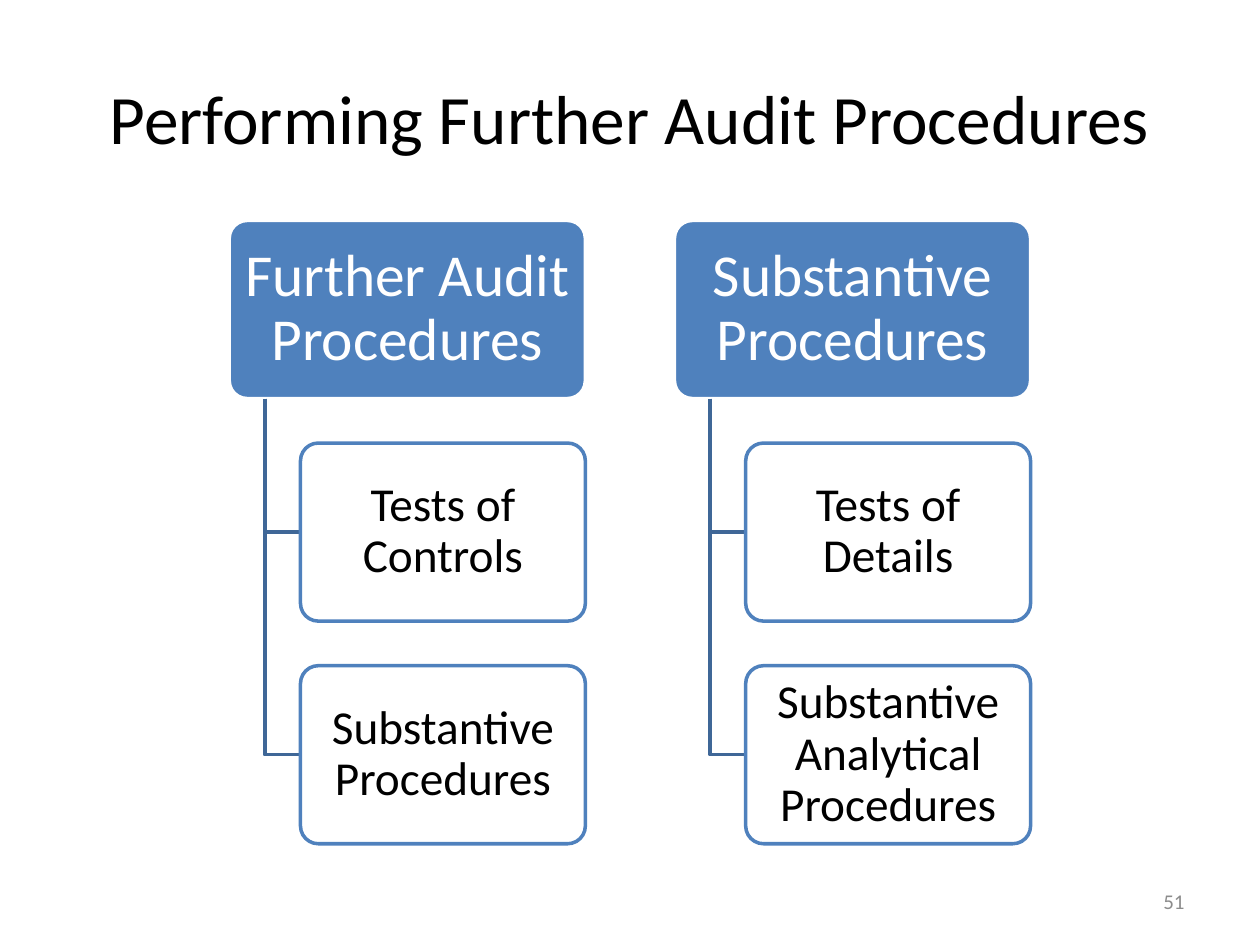
import pptx
import pptx.dml.color
import pptx.enum.shapes
import pptx.enum.text
import pptx.oxml
import pptx.oxml.ns
import pptx.util

Pt = pptx.util.Pt
ALIGN = pptx.enum.text.PP_ALIGN
MIDDLE = pptx.enum.text.MSO_ANCHOR.MIDDLE

BRANCHES = [
    ("Further Audit Procedures", ["Tests of Controls", "Substantive Procedures"]),
    ("Substantive Procedures", ["Tests of Details", "Substantive Analytical Procedures"]),
]
LEFT, TOP = 131, 126
BOX_WIDTH, BOX_HEIGHT = 203.5, 101.75
COLUMN_PITCH, ROW_PITCH = 254.4, 127.2
INDENT = BOX_WIDTH / 10


def color(hex_string):
    return pptx.dml.color.RGBColor.from_string(hex_string)


class SlideBuilder:
    font_name = "Calibri"
    accent = "4F81BD"
    connector_color = "3F6797"
    white = "FFFFFF"
    black = "000000"
    line_width = 2

    def __init__(self, presentation):
        self.slide = presentation.slides.add_slide(presentation.slide_layouts[5])

    def set_text(self, shape, text, size, font_color, alignment):
        frame = shape.text_frame
        frame.text = text
        frame.word_wrap = True
        frame.auto_size = pptx.enum.text.MSO_AUTO_SIZE.NONE
        frame.vertical_anchor = MIDDLE
        paragraph = frame.paragraphs[0]
        paragraph.alignment = alignment
        paragraph.font.name = self.font_name
        paragraph.font.size = Pt(size)
        paragraph.font.color.rgb = color(font_color)
        return frame

    def title(self, text):
        shape = self.slide.shapes.title
        shape.left, shape.top, shape.width, shape.height = Pt(36), Pt(21.6), Pt(648), Pt(90)
        self.set_text(shape, text, 39.6, self.black, ALIGN.CENTER)

    def page_number(self, text):
        shape = self.slide.shapes.add_textbox(Pt(516), Pt(500.5), Pt(168), Pt(28.8))
        self.set_text(shape, text, 12, "8C8C8C", ALIGN.RIGHT)

    def box(self, left, top, width, text, size, fill, line, font_color, opacity=100):
        shape = self.slide.shapes.add_shape(
            pptx.enum.shapes.MSO_SHAPE.ROUNDED_RECTANGLE,
            Pt(left), Pt(top), Pt(width), Pt(BOX_HEIGHT))
        shape.adjustments[0] = 0.1
        shape.shadow.inherit = False
        shape.fill.solid()
        shape.fill.fore_color.rgb = color(fill)
        if opacity < 100:
            fill_color = shape.element.spPr.find(".//" + pptx.oxml.ns.qn("a:srgbClr"))
            alpha = pptx.oxml.parse_xml(
                f'<a:alpha {pptx.oxml.ns.nsdecls("a")} val="{opacity * 1000}"/>')
            fill_color.append(alpha)
        shape.line.color.rgb = color(line)
        shape.line.width = Pt(self.line_width)
        frame = self.set_text(shape, text, size, font_color, ALIGN.CENTER)
        frame.margin_left = frame.margin_right = Pt(4.5)
        frame.margin_top = frame.margin_bottom = Pt(3)
        frame.paragraphs[0].line_spacing = 0.9

    def parent(self, left, top, text):
        self.box(left, top, BOX_WIDTH, text, 34, self.accent, self.white, self.white)

    def child(self, left, top, text):
        self.box(left, top, BOX_WIDTH * 0.8, text, 27, self.white, self.accent, self.black, 90)

    def elbow(self, left, top, right, bottom):
        builder = self.slide.shapes.build_freeform(Pt(left), Pt(top))
        builder.add_line_segments(
            [(Pt(left), Pt(bottom)), (Pt(right), Pt(bottom))], close=False)
        shape = builder.convert_to_shape()
        shape.shadow.inherit = False
        shape.fill.background()
        shape.line.color.rgb = color(self.connector_color)
        shape.line.width = Pt(self.line_width)


def main():
    presentation = pptx.Presentation()
    presentation.slide_width, presentation.slide_height = Pt(720), Pt(540)
    builder = SlideBuilder(presentation)
    builder.title("Performing Further Audit Procedures")
    for column, (heading, procedures) in enumerate(BRANCHES):
        left = LEFT + column * COLUMN_PITCH
        builder.parent(left, TOP, heading)
        for row, procedure in enumerate(procedures, start=1):
            top = TOP + row * ROW_PITCH
            child_left = left + 2 * INDENT
            builder.elbow(left + INDENT, TOP + BOX_HEIGHT, child_left, top + BOX_HEIGHT / 2)
            builder.child(child_left, top, procedure)
    builder.page_number("51")
    presentation.save("out.pptx")


if __name__ == "__main__":
    main()
